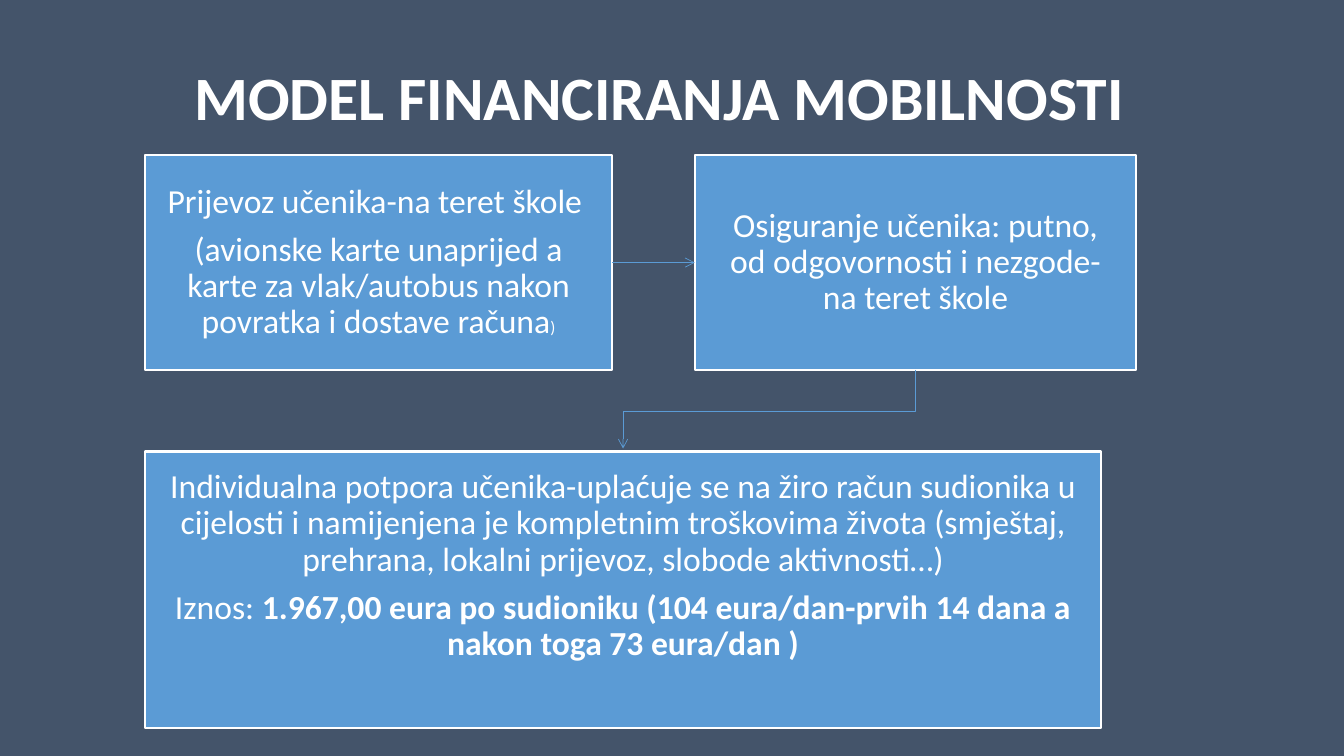
from pptx import Presentation
from pptx.dml.color import RGBColor
from pptx.enum.shapes import MSO_CONNECTOR, MSO_SHAPE
from pptx.enum.text import MSO_ANCHOR, PP_ALIGN
from pptx.oxml.ns import qn
from pptx.util import Inches, Pt
from lxml.etree import SubElement

COLORS = {"background": "44546A", "box": "5B9BD5", "arrow": "5B9BD5", "text": "FFFFFF"}
BOX_FRAME = {
    "word_wrap": True,
    "margin_left": Inches(0.17),
    "margin_right": Inches(0.17),
    "margin_top": Inches(0.18),
    "margin_bottom": Inches(0.18),
}
BOX_PARAGRAPH = {"alignment": PP_ALIGN.CENTER, "line_spacing": 0.9, "space_after": Pt(8.4)}
BODY = {"name": "Calibri", "size": Pt(24), "bold": False}
BOLD = {**BODY, "bold": True}
SMALL = {**BODY, "size": Pt(12)}
TITLE = {**BOLD, "size": Pt(44)}

LEFT, TOP_ROW, TOP_HEIGHT = 1.44, 1.54, 2.13
TRANSPORT = [
    [("Prijevoz učenika-na teret škole ", BODY)],
    [("(avionske karte unaprijed a karte za vlak/autobus nakon povratka i dostave računa", BODY),
     (")", SMALL)],
]
INSURANCE = [
    [("Osiguranje učenika: putno, od odgovornosti i nezgode- na teret škole", BODY)],
]
SUPPORT = [
    [("Individualna potpora učenika-uplaćuje se na žiro račun sudionika u cijelosti i "
      "namijenjena je kompletnim troškovima života (smještaj, prehrana, lokalni prijevoz, "
      "slobode aktivnosti…)", BODY)],
    [("Iznos: ", BODY),
     ("1.967,00 eura po sudioniku (104 eura/dan-prvih 14 dana a nakon toga 73 eura/dan )", BOLD)],
]


def color(name):
    return RGBColor.from_string(COLORS[name])


def apply(target, values):
    for attribute, value in values.items():
        setattr(target, attribute, value)


def write(frame, paragraphs, paragraph_format):
    for index, runs in enumerate(paragraphs):
        paragraph = frame.paragraphs[0] if index == 0 else frame.add_paragraph()
        apply(paragraph, paragraph_format)
        for words, font_format in runs:
            run = paragraph.add_run()
            run.text = words
            apply(run.font, font_format)
            run.font.color.rgb = color("text")


def add_title(slide, words):
    heading = slide.shapes.add_textbox(Inches(1.83), Inches(0.27), Inches(11.5), Inches(1.45))
    apply(heading.text_frame, {"word_wrap": True, "vertical_anchor": MSO_ANCHOR.MIDDLE})
    write(heading.text_frame, [[(words, TITLE)]], {"line_spacing": 0.9})


def add_box(slide, left, top, width, height, paragraphs, anchor=MSO_ANCHOR.MIDDLE):
    box = slide.shapes.add_shape(
        MSO_SHAPE.RECTANGLE, Inches(left), Inches(top), Inches(width), Inches(height))
    box.shadow.inherit = False
    box.fill.solid()
    box.fill.fore_color.rgb = color("box")
    box.line.color.rgb = color("text")
    box.line.width = Pt(1.5)
    apply(box.text_frame, {**BOX_FRAME, "vertical_anchor": anchor})
    write(box.text_frame, paragraphs, BOX_PARAGRAPH)
    return box


def style_arrow(arrow):
    arrow.line.color.rgb = color("arrow")
    arrow.line.width = Pt(0.5)
    properties = arrow._element.spPr
    SubElement(properties.find(qn("a:ln")), qn("a:tailEnd"), type="arrow")
    if properties.find(qn("a:effectLst")) is None:
        SubElement(properties, qn("a:effectLst"))


def add_side_arrow(slide, source, target):
    arrow = slide.shapes.add_connector(MSO_CONNECTOR.STRAIGHT, 0, 0, 0, 0)
    arrow.begin_connect(source, 3)
    arrow.end_connect(target, 1)
    style_arrow(arrow)


def add_bent_arrow(slide, points):
    (start, *rest) = [(Inches(x), Inches(y)) for x, y in points]
    builder = slide.shapes.build_freeform(*start)
    builder.add_line_segments(rest, close=False)
    arrow = builder.convert_to_shape()
    arrow.fill.background()
    arrow.shadow.inherit = False
    style_arrow(arrow)


def main():
    deck = Presentation()
    deck.slide_width, deck.slide_height = Inches(13.33), Inches(7.5)
    slide = deck.slides.add_slide(deck.slide_layouts[6])
    slide.background.fill.solid()
    slide.background.fill.fore_color.rgb = color("background")

    add_title(slide, "MODEL FINANCIRANJA MOBILNOSTI")
    transport = add_box(slide, LEFT, TOP_ROW, 4.63, TOP_HEIGHT, TRANSPORT)
    insurance = add_box(slide, 6.89, TOP_ROW, 4.38, TOP_HEIGHT, INSURANCE)
    add_box(slide, LEFT, 4.48, 9.48, 2.74, SUPPORT, MSO_ANCHOR.TOP)
    add_side_arrow(slide, transport, insurance)
    add_bent_arrow(slide, [(9.08, 3.67), (9.08, 4.08), (6.18, 4.08), (6.18, 4.45)])
    deck.save("out.pptx")


if __name__ == "__main__":
    main()
